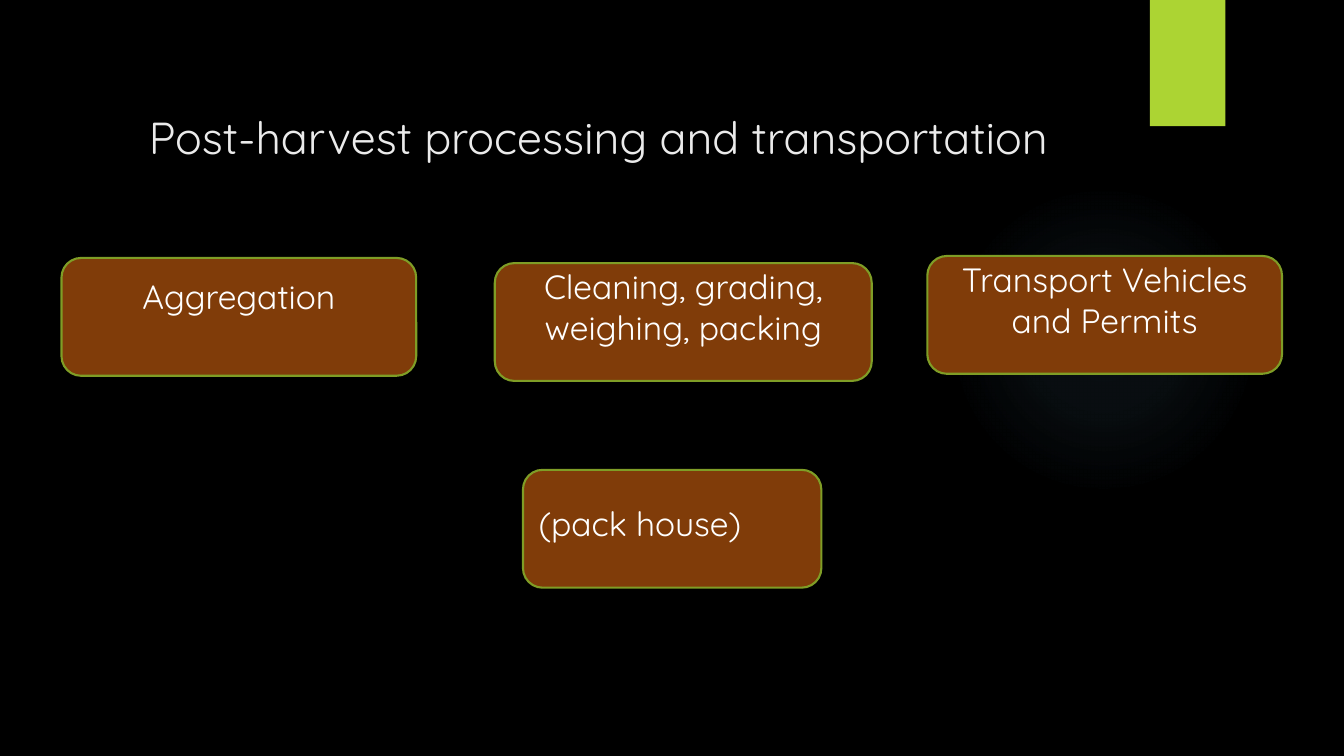
from dataclasses import dataclass

from pptx import Presentation
from pptx.dml.color import RGBColor
from pptx.enum.shapes import MSO_SHAPE
from pptx.enum.text import MSO_ANCHOR, PP_ALIGN
from pptx.oxml import parse_xml
from pptx.oxml.ns import nsdecls
from pptx.shapes.autoshape import Shape
from pptx.slide import Slide
from pptx.text.text import Font
from pptx.util import Cm, Pt

COLOURS = {
    "background": "000000",
    "glow": "7AC4F0",
    "tab": "ACD433",
    "title": "EBEBEB",
    "step": "803C09",
    "outline": "7F9D26",
    "step_text": "FFFFFF",
}
FONT = "Quicksand"
STEP_HEIGHT = 2.97
GLOW_STOPS = ((0, 7), (36, 6), (69, 0))  # position and opacity, in percent


@dataclass(frozen=True)
class Step:
    """One stage of the process; lengths in centimetres."""

    text: str
    left: float
    top: float
    width: float
    bottom_inset: float = 0.9
    align: PP_ALIGN = PP_ALIGN.CENTER
    line_spacing: float = 1.0


STEPS = (
    Step("Aggregation", 1.55, 6.5, 8.94, bottom_inset=1.15),
    Step("(pack house)", 13.18, 11.84, 7.52, align=PP_ALIGN.LEFT, line_spacing=1.5),
    Step("Transport Vehicles and Permits", 23.37, 6.45, 8.94),
    Step("Cleaning, grading, weighing, packing", 12.47, 6.63, 9.5),
)


def colour(key: str) -> RGBColor:
    return RGBColor.from_string(COLOURS[key])


def style_font(font: Font, size: float, key: str) -> None:
    font.name = FONT
    font.size = Pt(size)
    font.color.rgb = colour(key)


def add_plain_shape(slide: Slide, kind: MSO_SHAPE, left: float, top: float,
                    width: float, height: float, key: str) -> Shape:
    """Add a filled shape without line or shadow."""
    shape = slide.shapes.add_shape(kind, Cm(left), Cm(top), Cm(width), Cm(height))
    shape.shadow.inherit = False
    shape.fill.solid()
    shape.fill.fore_color.rgb = colour(key)
    shape.line.fill.background()
    return shape


def add_glow(slide: Slide) -> None:
    """Add a circle that fades out from its centre."""
    glow = add_plain_shape(slide, MSO_SHAPE.OVAL, 23.9, 4.65, 7.82, 7.82, "glow")
    stops = "".join(
        f'<a:gs pos="{position * 1000}"><a:srgbClr val="{COLOURS["glow"]}">'
        f'<a:alpha val="{opacity * 1000}"/></a:srgbClr></a:gs>'
        for position, opacity in GLOW_STOPS
    )
    gradient = parse_xml(
        f'<a:gradFill {nsdecls("a")} rotWithShape="1"><a:gsLst>{stops}</a:gsLst>'
        '<a:path path="circle"><a:fillToRect l="50000" t="50000" r="50000" b="50000"/>'
        "</a:path></a:gradFill>"
    )
    properties = glow.element.spPr
    properties.replace(properties.solidFill, gradient)


def set_title(slide: Slide, text: str) -> None:
    title = slide.shapes.title
    title.left, title.top, title.width, title.height = Cm(3.5), Cm(2.64), Cm(25.76), Cm(1.78)
    title.text_frame.text = text
    title.text_frame.vertical_anchor = MSO_ANCHOR.TOP
    paragraph = title.text_frame.paragraphs[0]
    paragraph.alignment = PP_ALIGN.LEFT
    style_font(paragraph.font, 32, "title")


def add_step(slide: Slide, step: Step) -> None:
    box = add_plain_shape(slide, MSO_SHAPE.ROUNDED_RECTANGLE, step.left, step.top,
                          step.width, STEP_HEIGHT, "step")
    box.line.color.rgb = colour("outline")
    box.line.width = Pt(1.5)
    frame = box.text_frame
    frame.text = step.text
    frame.word_wrap = True
    frame.vertical_anchor = MSO_ANCHOR.MIDDLE
    frame.margin_bottom = Cm(step.bottom_inset)
    paragraph = frame.paragraphs[0]
    paragraph.alignment = step.align
    paragraph.line_spacing = step.line_spacing
    style_font(paragraph.font, 24, "step_text")


def main() -> None:
    presentation = Presentation()
    presentation.slide_width, presentation.slide_height = Cm(33.87), Cm(19.05)
    slide = presentation.slides.add_slide(presentation.slide_layouts.get_by_name("Title Only"))
    slide.background.fill.solid()
    slide.background.fill.fore_color.rgb = colour("background")
    add_glow(slide)
    add_plain_shape(slide, MSO_SHAPE.RECTANGLE, 28.98, 0, 1.9, 3.18, "tab")
    set_title(slide, "Post-harvest processing and transportation")
    for step in STEPS:
        add_step(slide, step)
    presentation.save("out.pptx")


if __name__ == "__main__":
    main()
